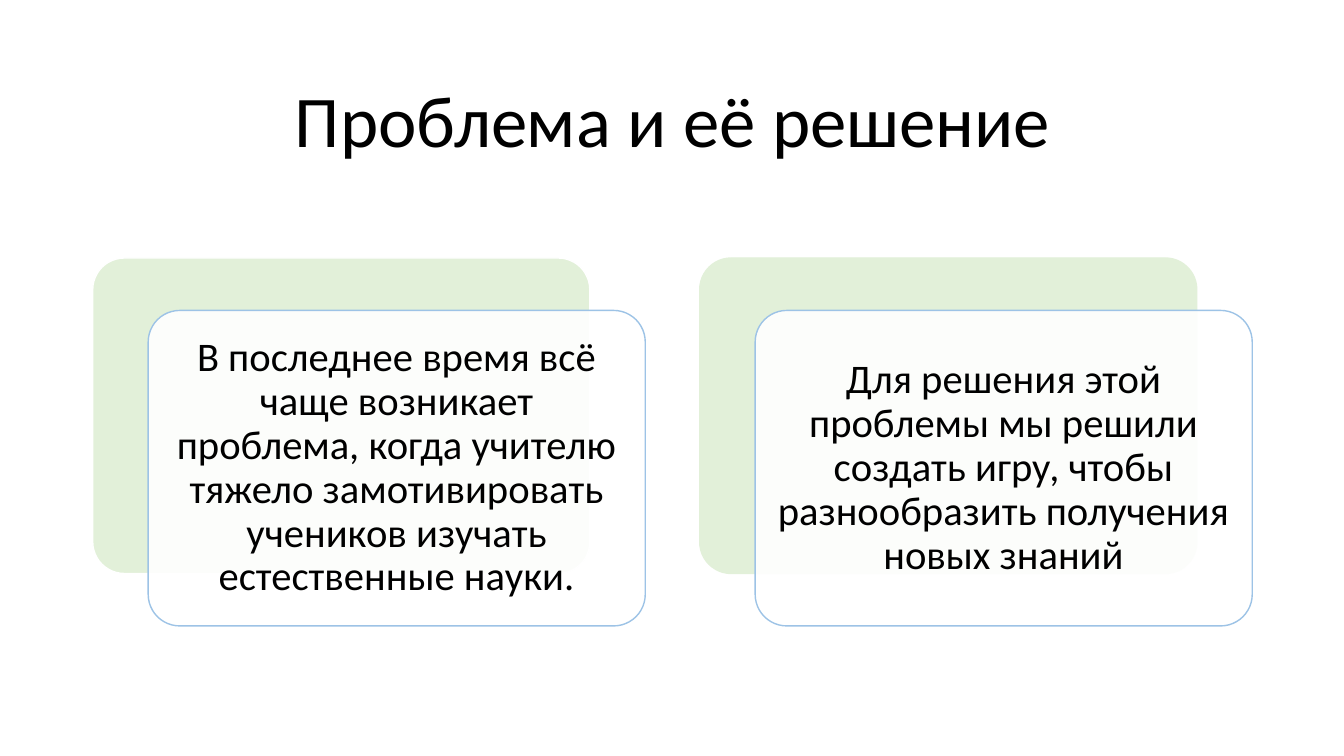
from dataclasses import dataclass

from lxml.etree import SubElement
from pptx import Presentation
from pptx.dml.color import RGBColor
from pptx.enum.shapes import MSO_SHAPE as Preset
from pptx.enum.text import MSO_ANCHOR as Anchor, PP_ALIGN as Align
from pptx.oxml.ns import qn
from pptx.shapes.autoshape import Shape
from pptx.slide import Slide
from pptx.util import Pt

PX = 9144  # EMU; 100 px to the inch
TITLE_ONLY = 5
CARD_TOP, CARD_WIDTH, CARD_HEIGHT = 256, 493, 313
FRONT_SHIFT_X, FRONT_SHIFT_Y = 55, 52
GREEN, BLUE, WHITE, BLACK = "E2F0D9", "9DC3E6", "FFFFFF", "000000"


@dataclass
class Card:
    left: int
    back_line: str
    text: str


CARDS = [
    Card(92, WHITE, "В последнее время всё чаще возникает проблема, когда учителю "
                    "тяжело замотивировать учеников изучать естественные науки."),
    Card(694, GREEN, "Для решения этой проблемы мы решили создать игру, чтобы "
                     "разнообразить получения новых знаний"),
]


def rgb(color: str) -> RGBColor:
    return RGBColor.from_string(color)


def write(shape: Shape, text: str, *, size: int, inset: int) -> None:
    frame = shape.text_frame
    frame.word_wrap = True
    frame.vertical_anchor = Anchor.MIDDLE
    frame.margin_left = frame.margin_right = inset * PX
    frame.margin_top = frame.margin_bottom = inset * PX
    paragraph = frame.paragraphs[0]
    paragraph.alignment = Align.CENTER
    paragraph.line_spacing = 0.9
    run = paragraph.add_run()
    run.text = text
    run.font.size = Pt(size)
    run.font.name = "Calibri"
    run.font.color.rgb = rgb(BLACK)


def add_panel(slide: Slide, left: int, top: int, *, fill: str, line: str,
              opacity: int = 100) -> Shape:
    panel = slide.shapes.add_shape(Preset.ROUNDED_RECTANGLE, left * PX, top * PX,
                                   CARD_WIDTH * PX, CARD_HEIGHT * PX)
    panel.adjustments[0] = 0.1
    panel.shadow.inherit = False
    panel.fill.solid()
    panel.fill.fore_color.rgb = rgb(fill)
    panel.line.color.rgb = rgb(line)
    panel.line.width = Pt(1)
    if opacity < 100:
        fill_color = panel.fill._xPr.find(qn("a:solidFill"))[0]
        SubElement(fill_color, qn("a:alpha"), val=str(opacity * 1000))
    return panel


def add_card(slide: Slide, card: Card) -> None:
    """Draw a green back panel and a translucent front panel with the text."""
    add_panel(slide, card.left, CARD_TOP, fill=GREEN, line=card.back_line)
    front = add_panel(slide, card.left + FRONT_SHIFT_X, CARD_TOP + FRONT_SHIFT_Y,
                      fill=WHITE, line=BLUE, opacity=90)
    write(front, card.text, size=29, inset=12)


def main() -> None:
    deck = Presentation()
    deck.slide_width, deck.slide_height = 1333 * PX, 750 * PX
    slide = deck.slides.add_slide(deck.slide_layouts[TITLE_ONLY])

    title = slide.shapes.title
    title.left, title.top = 92 * PX, 61 * PX
    title.width, title.height = 1150 * PX, 124 * PX
    write(title, "Проблема и её решение", size=52, inset=5)

    for card in CARDS:
        add_card(slide, card)
    deck.save("out.pptx")


if __name__ == "__main__":
    main()
